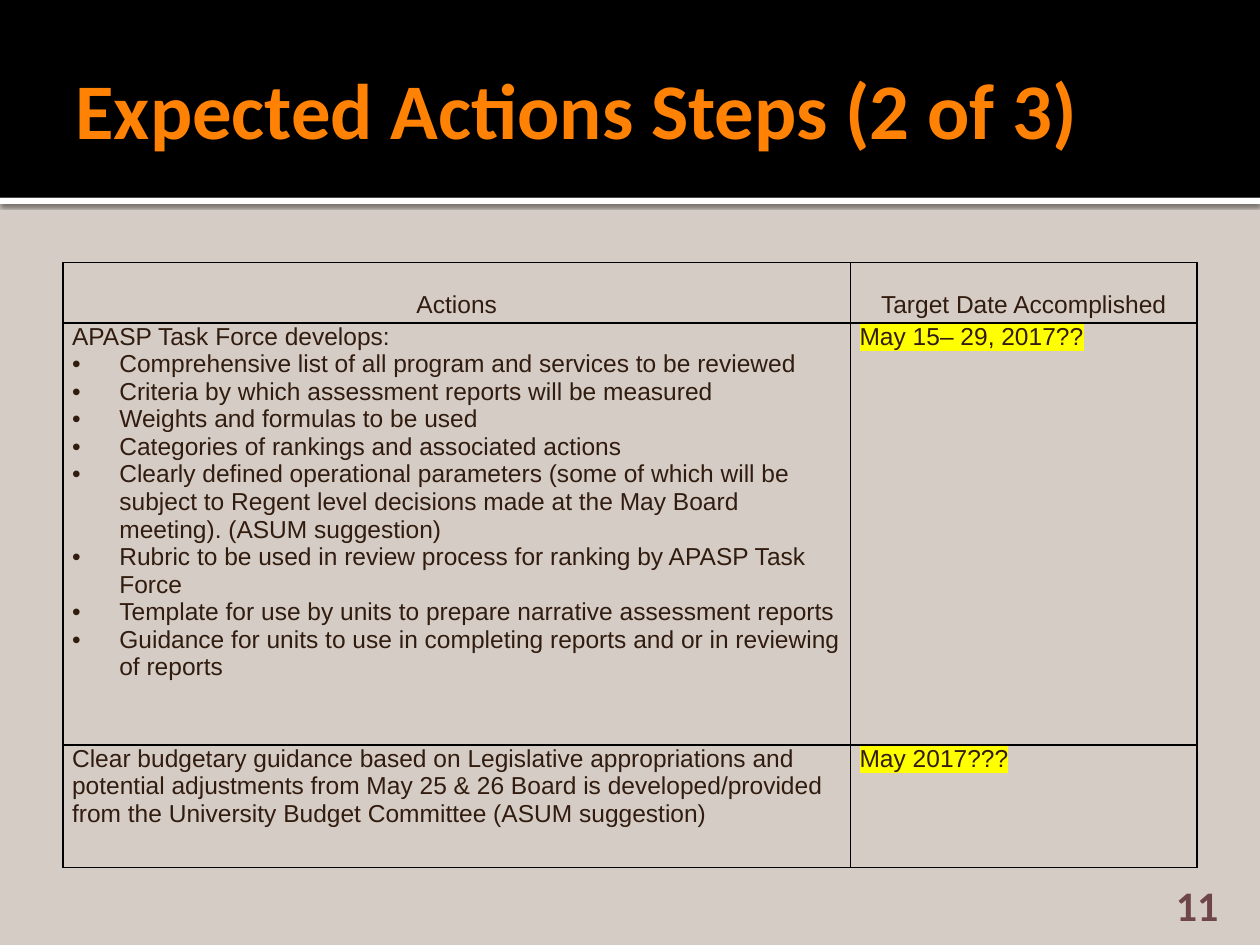
from pptx import Presentation
from pptx.dml.color import RGBColor
from pptx.enum.shapes import MSO_SHAPE
from pptx.enum.text import MSO_ANCHOR, PP_ALIGN
from pptx.oxml.ns import qn
from pptx.util import Pt
from lxml.etree import SubElement, Element

# Content
TITLE = "Expected Actions Steps (2 of 3)"
NUMBER = "11"
HEAD = ("Actions", "Target Date Accomplished")
LEAD = "APASP Task Force develops:"
ITEMS = [
    "Comprehensive list of all program and services to be reviewed",
    "Criteria by which assessment reports will be measured",
    "Weights and formulas to be used",
    "Categories of rankings and associated actions",
    "Clearly defined operational parameters (some of which will be subject to "
    "Regent level decisions made at the May Board meeting). (ASUM suggestion)",
    "Rubric to be used in review process for ranking by APASP Task Force",
    "Template for use by units to prepare narrative assessment reports",
    "Guidance for units to use in completing reports and or in reviewing of reports",
]
BUDGET = (
    "Clear budgetary guidance based on Legislative appropriations and potential "
    "adjustments from May 25 & 26 Board is developed/provided from the "
    "University Budget Committee (ASUM suggestion)"
)
ROWS = [
    HEAD,
    ("\n".join([LEAD] + ITEMS), "May 15– 29, 2017??"),
    (BUDGET, "May 2017???"),
]
WIDTHS = (450, 198)
HEIGHTS = (34.6, 241.2, 69.8)
COLORS = {
    "back": "D5CDC5", "band": "000000", "strip": "FFFFFF", "title": "FF8205",
    "text": "311C0F", "mark": "FFFF00", "border": "000000", "number": "6E4549",
}


def rgb(name):
    return RGBColor.from_string(COLORS[name])


def tint(parent, name):
    fill = SubElement(parent, qn("a:solidFill"))
    return SubElement(fill, qn("a:srgbClr"), val=COLORS[name])


def style(run, face, size, color, bold=False):
    font = run.font
    font.name, font.size, font.bold = face, Pt(size), bold
    font.color.rgb = rgb(color)


def inset(box, left, top, right, bottom):
    box.margin_left, box.margin_top = Pt(left), Pt(top)
    box.margin_right, box.margin_bottom = Pt(right), Pt(bottom)


def bar(top, height, color):
    shape = slide.shapes.add_shape(MSO_SHAPE.RECTANGLE, 0, Pt(top), Pt(720), Pt(height))
    shape.fill.solid()
    shape.fill.fore_color.rgb = rgb(color)
    shape.line.fill.background()
    shape.shadow.inherit = False
    return shape


def bullet(para):
    props = para._p.get_or_add_pPr()
    props.set("marL", str(Pt(27)))
    props.set("indent", str(Pt(-27)))
    SubElement(props, qn("a:buFont"), typeface="Arial")
    SubElement(props, qn("a:buChar"), char="•")


def mark(run):
    light = Element(qn("a:highlight"))
    SubElement(light, qn("a:srgbClr"), val=COLORS["mark"])
    run._r.rPr.find(qn("a:solidFill")).addnext(light)


def border(cell):
    props = cell._tc.get_or_add_tcPr()
    for side in ("lnL", "lnR", "lnT", "lnB"):
        tint(SubElement(props, qn("a:" + side), w=str(Pt(1))), "border")


deck = Presentation()
deck.slide_width, deck.slide_height = Pt(720), Pt(540)
slide = deck.slides.add_slide(deck.slide_layouts[5])
slide.background.fill.solid()
slide.background.fill.fore_color.rgb = rgb("back")

# Header band with a shadowed strip below it
strip = bar(113, 3.6, "strip")
effects = strip._element.spPr.find(qn("a:effectLst"))
shade = SubElement(effects, qn("a:outerShdw"), blurRad=str(Pt(2.5)),
                   dist=str(Pt(0.8)), dir="5400000", rotWithShape="0")
black = SubElement(shade, qn("a:srgbClr"), val=COLORS["band"])
SubElement(black, qn("a:alpha"), val="60000")
bar(0, 113, "band")

# Title, brought in front of the band
title = slide.shapes.title
slide.shapes._spTree.append(title._element)
title.left, title.top, title.width, title.height = Pt(36), Pt(12.2), Pt(648), Pt(98.6)
frame = title.text_frame
frame.text = TITLE
frame.vertical_anchor = MSO_ANCHOR.MIDDLE
inset(frame, 7.2, 3.6, 3.6, 3.6)
frame.paragraphs[0].alignment = PP_ALIGN.LEFT
style(frame.paragraphs[0].runs[0], "Calibri", 45, "title", True)

# Table of actions and dates
table = slide.shapes.add_table(len(ROWS), len(WIDTHS), Pt(36), Pt(150),
                               Pt(sum(WIDTHS)), Pt(sum(HEIGHTS))).table
table.first_row = table.horz_banding = False
for col, width in zip(table.columns, WIDTHS):
    col.width = Pt(width)
for r, (texts, height) in enumerate(zip(ROWS, HEIGHTS)):
    table.rows[r].height = Pt(height)
    for c, text in enumerate(texts):
        cell = table.cell(r, c)
        border(cell)
        cell.fill.background()
        inset(cell, 5.2, 0, 5.2, 0)
        cell.text_frame.text = text
        if r == 0:
            cell.vertical_anchor = MSO_ANCHOR.BOTTOM
            cell.margin_bottom = Pt(2.5)
        for para in cell.text_frame.paragraphs:
            para.alignment = PP_ALIGN.CENTER if r == 0 else PP_ALIGN.LEFT
            run = para.runs[0]
            style(run, "Arial", 14, "text")
            if para.text in ITEMS:
                bullet(para)
            if r and c:
                mark(run)

# Slide number
box = slide.shapes.add_textbox(Pt(645.8), Pt(509.8), Pt(57.6), Pt(21.6))
frame = box.text_frame
frame.word_wrap = True
frame.text = NUMBER
frame.vertical_anchor = MSO_ANCHOR.BOTTOM
inset(frame, 7.2, 3.6, 7.2, 0)
frame.paragraphs[0].alignment = PP_ALIGN.RIGHT
style(frame.paragraphs[0].runs[0], "Calibri", 24, "number", True)

deck.save("out.pptx")
